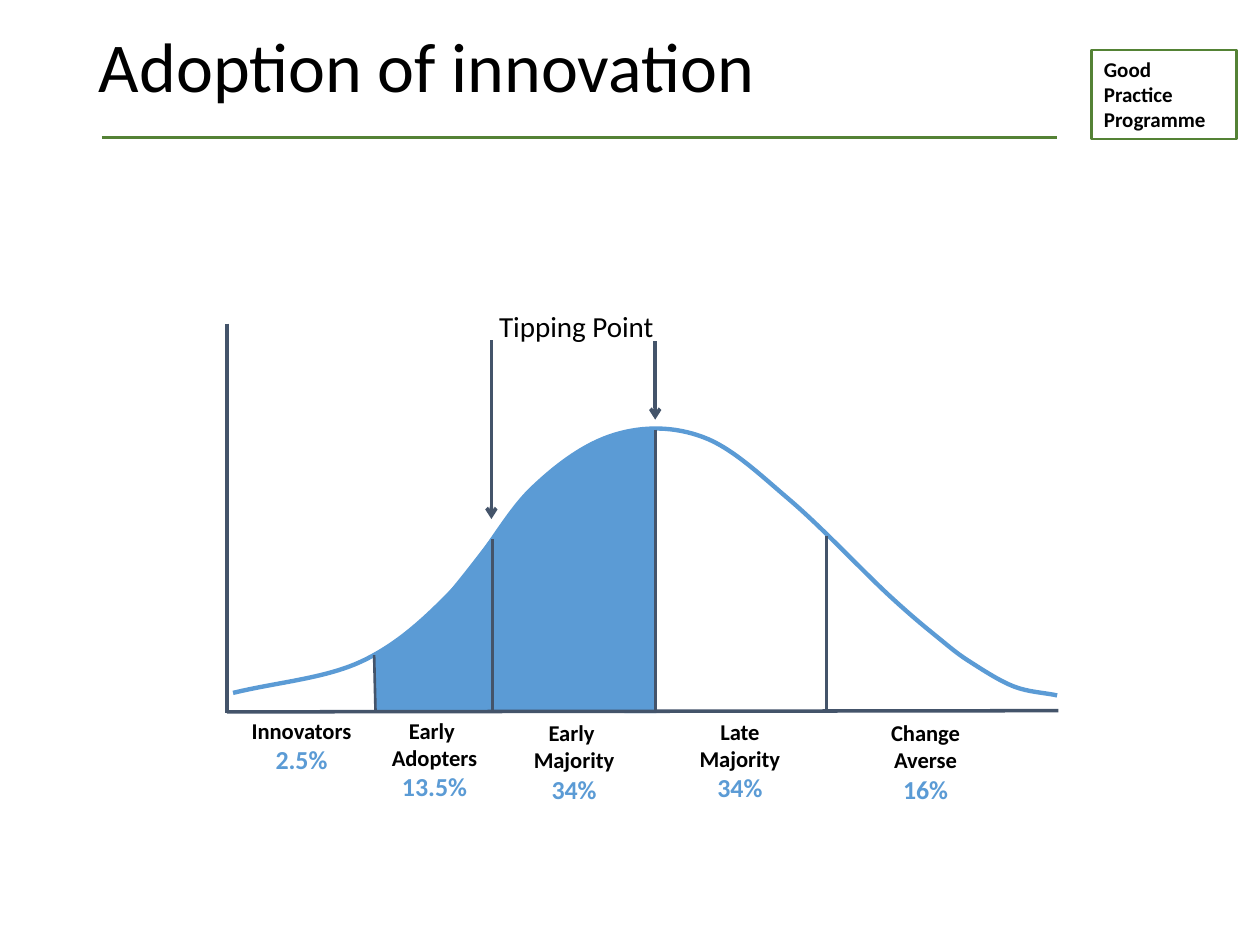
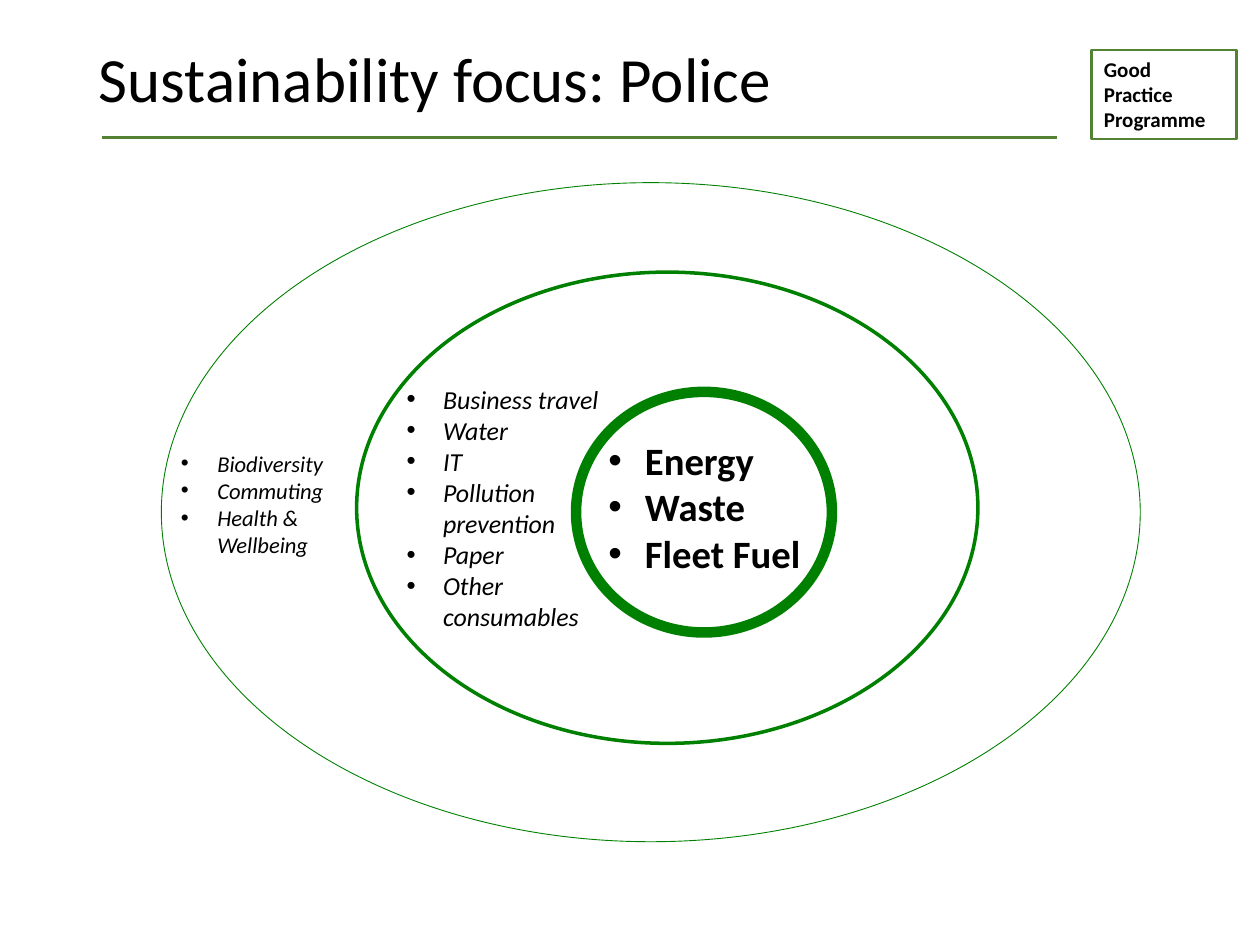
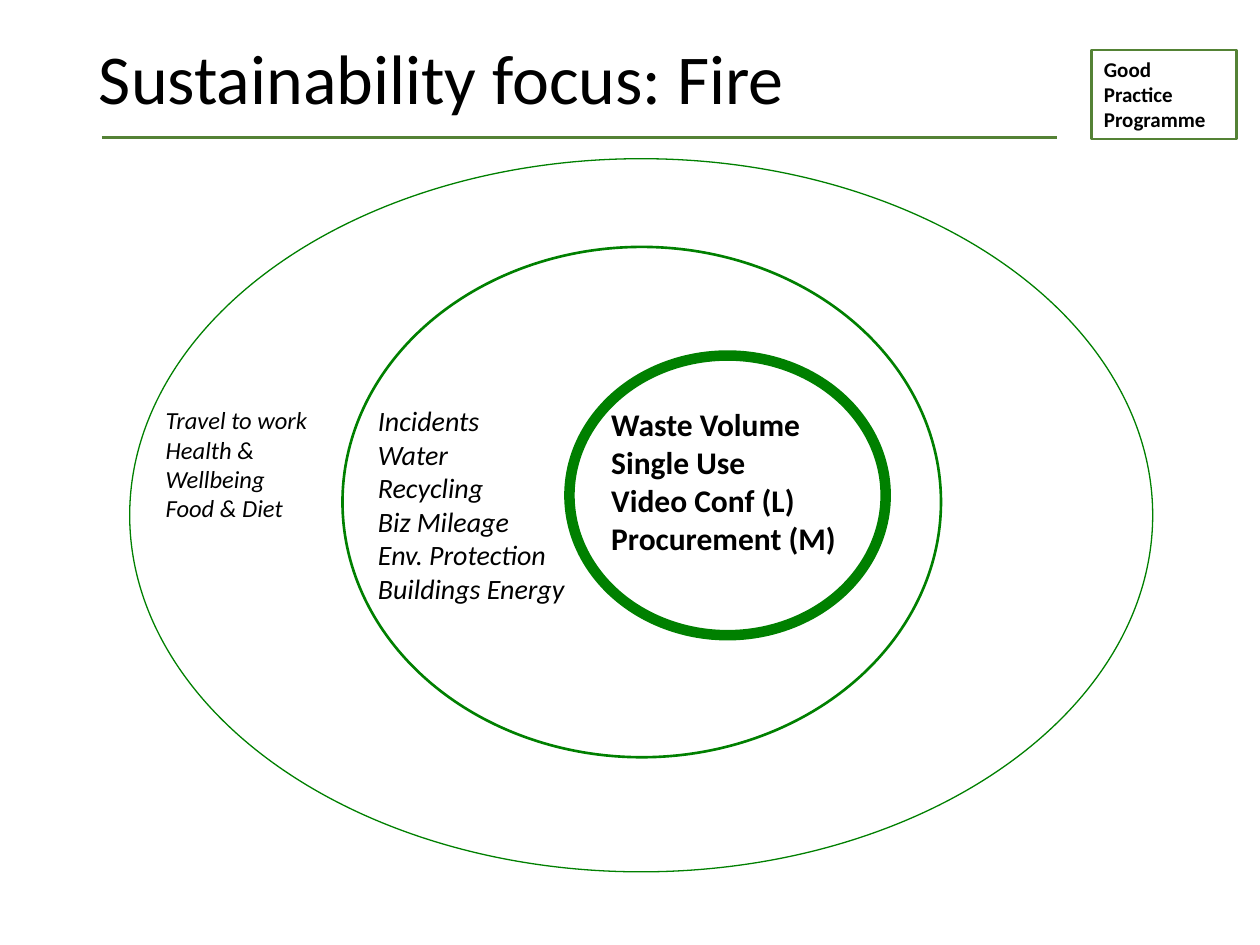
from lxml.etree import SubElement
from pptx import Presentation
from pptx.dml.color import RGBColor
from pptx.enum.shapes import MSO_CONNECTOR, MSO_SHAPE
from pptx.enum.text import MSO_ANCHOR as ANCHOR, MSO_AUTO_SIZE as AUTO, PP_ALIGN as ALIGN
from pptx.oxml.ns import qn
from pptx.util import Pt

FONT = "Calibri"
BLACK = RGBColor(0x00, 0x00, 0x00)
BAND_GREEN = RGBColor(0x54, 0x82, 0x35)
RING_GREEN = RGBColor(0x00, 0x80, 0x00)
CURVE_BLUE = RGBColor(0x5B, 0x9B, 0xD5)
SLATE = RGBColor(0x44, 0x54, 0x6A)


def add_text(page, lines, left, top, width, height, *, size, bold=False, italic=False,
             align=ALIGN.LEFT, anchor=ANCHOR.TOP, wrap=True, grow=True, bullets=False,
             spacing=None, border=None):
    area = Pt(left), Pt(top), Pt(width), Pt(height)
    if border:
        box = page.shapes.add_shape(MSO_SHAPE.RECTANGLE, *area)
        box.shadow.inherit = False
        box.fill.background()
        box.line.color.rgb = border
        box.line.width = Pt(1.5)
    else:
        box = page.shapes.add_textbox(*area)
    frame = box.text_frame
    frame.word_wrap = wrap
    frame.auto_size = AUTO.SHAPE_TO_FIT_TEXT if grow else AUTO.NONE
    frame.vertical_anchor = anchor
    for number, line in enumerate(lines):
        para = frame.add_paragraph() if number else frame.paragraphs[0]
        if bullets:
            properties = para._p.get_or_add_pPr()
            properties.set("marL", str(Pt(20.9)))
            properties.set("indent", str(-Pt(20.9)))
            SubElement(properties, qn("a:buFont"), typeface="Arial")
            SubElement(properties, qn("a:buChar"), char="•")
        para.alignment = align
        if spacing:
            para.line_spacing = spacing
        span = para.add_run()
        span.text = line
        font = span.font
        font.name, font.size, font.bold, font.italic = FONT, Pt(size), bold, italic
        font.color.rgb = BLACK
    return box


def add_line(page, x1, y1, x2, y2, *, color=SLATE, width=1.5, arrow=False):
    line = page.shapes.add_connector(MSO_CONNECTOR.STRAIGHT, Pt(x1), Pt(y1), Pt(x2), Pt(y2))
    line.line.color.rgb = color
    line.line.width = Pt(width)
    properties = line._element.spPr
    if arrow:
        SubElement(properties.find(qn("a:ln")), qn("a:tailEnd"), type="arrow")
    SubElement(properties, qn("a:effectLst"))


deck = Presentation()
deck.slide_width, deck.slide_height = Pt(720), Pt(540)

# Title, rule and programme box on every slide
pages = []
for title, size, anchor in [
    ("Adoption of innovation", 40, ANCHOR.TOP),
    ("Sustainability focus: Police", 36, ANCHOR.MIDDLE),
    ("Sustainability focus: Fire", 40, ANCHOR.MIDDLE),
]:
    page = deck.slides.add_slide(deck.slide_layouts[6])
    pages.append(page)
    add_text(page, ["Good Practice Programme"], 623.7, 28.6, 82.8, 50.9,
             size=12, bold=True, border=BAND_GREEN)
    add_line(page, 58.3, 78.5, 604.1, 78.5, color=BAND_GREEN)
    add_text(page, [title], 49.5, 15, 566.6, 63.4, size=size, anchor=anchor,
             grow=False, spacing=0.9)
adoption, police, fire = pages

# Adoption curve: each knot's handles follow the line between its neighbours
knots = [(133.2, 396), (206.6, 378), (259.2, 337), (303.8, 279.4), (351.4, 248.4),
         (401.8, 249.8), (451.4, 285.8), (507.6, 339.8), (537.8, 365.8),
         (555.1, 378.7), (579.6, 392.4), (604.1, 397.4)]
before = tuple(2 * a - b for a, b in zip(knots[0], knots[1]))
after = tuple(2 * a - b for a, b in zip(knots[-1], knots[-2]))
guides = [before, *knots, after]
curve = [knots[0]]
for quad in zip(guides, guides[1:], guides[2:], guides[3:]):
    axes = list(zip(*quad))
    curve.append(tuple(b + (c - a) / 6 for a, b, c, d in axes))
    curve.append(tuple(c - (d - b) / 6 for a, b, c, d in axes))
    curve.append(quad[2])

# Shaded early adopters and early majority: right side, top, left side
shaded = [(375.1, 407.5), (375.1, 355.7), (375.1, 295.9), (375.1, 244.8),
          (300.2, 241.2), (271.4, 347.8), (213.8, 374.4),
          (214.6, 385.2), (214.6, 396), (214.6, 406.8)]

# Every three points after the first make one Bézier segment
for points, closed in [(shaded, True), (curve, False)]:
    outline = [(Pt(x), Pt(y)) for x, y in points]
    builder = adoption.shapes.build_freeform(*outline[0])
    builder.add_line_segments(outline[1:], close=closed)
    shape = builder.convert_to_shape()
    segments = list(shape._element.iter(qn("a:lnTo")))
    for first, second, third in zip(segments[::3], segments[1::3], segments[2::3]):
        first.tag = qn("a:cubicBezTo")
        for segment in (second, third):
            first.append(segment[0])
            segment.getparent().remove(segment)
    shape.shadow.inherit = False
    if closed:
        shape.fill.solid()
        shape.fill.fore_color.rgb = CURVE_BLUE
        shape.line.fill.background()
    else:
        shape.fill.background()
        shape.line.color.rgb = CURVE_BLUE
        shape.line.width = Pt(2.5)

# Axes, stage dividers and tipping point
add_line(adoption, 129.6, 406.8, 604.8, 406.1, width=2)
add_line(adoption, 129.6, 185, 129.6, 407.5, width=2)
for x1, top, x2, bottom in [(213.8, 374.4, 214.6, 406.8), (281.5, 308.2, 281.5, 406.8),
                            (374.4, 245.5, 374.4, 406.1), (472.3, 306, 472.3, 406.1)]:
    add_line(adoption, x1, top, x2, bottom)
for x, top, bottom in [(280.8, 194.4, 296.6), (374.4, 195.1, 239.8)]:
    add_line(adoption, x, top, x, bottom, width=2, arrow=True)
add_text(adoption, ["Tipping Point"], 278.1, 172.8, 104.4, 27.4, size=16.6, wrap=False)

# Stage labels with their shares
for lines, left, top, width, height, wrap in [
    (["Innovators", "2.5%"], 135.9, 406.2, 72.7, 41, False),
    (["Early ", "Adopters", "13.5%"], 216.2, 406.1, 64.1, 56.2, False),
    (["Early ", "Majority", "34%"], 297.4, 407.3, 61.2, 56.2, False),
    (["Late", "Majority", "34%"], 392.2, 406.7, 61.2, 56.2, False),
    (["Change Averse", "16%"], 494, 407.5, 69.8, 56.2, True),
]:
    label = add_text(adoption, lines, left, top, width, height, size=12.9, bold=True,
                     align=ALIGN.CENTER, wrap=wrap)
    share = label.text_frame.paragraphs[-1].runs[0].font
    share.size = Pt(14.8)
    share.color.rgb = CURVE_BLUE

# Focus rings, from the outside in
for page, rings in [
    (police, [(92.2, 104.4, 559.4, 376.6, 0.5), (203.8, 155.5, 355, 269.3, 2),
              (329.2, 223.9, 146.2, 137.5, 6)]),
    (fire, [(74.1, 90.7, 584.6, 407.5, 0.75), (195.7, 141.1, 342, 291.6, 1.5),
            (325.4, 203.2, 180.7, 159.8, 6)]),
]:
    for left, top, width, height, weight in rings:
        ring = page.shapes.add_shape(MSO_SHAPE.OVAL, Pt(left), Pt(top), Pt(width), Pt(height))
        ring.shadow.inherit = False
        ring.fill.background()
        ring.line.color.rgb = RING_GREEN
        ring.line.width = Pt(weight)

# Topics inside the rings: the core is bold, the others italic
for page, lines, left, top, width, height, size, core in [
    (police, ["Energy", "Waste", "Fleet Fuel"], 340.6, 246, 125.3, 87.8, 22.1, True),
    (police, ["Business travel", "Water", "IT", "Pollution prevention", "Paper",
              "Other consumables"], 225.2, 215.6, 133.2, 168.5, 14.8, False),
    (police, ["Biodiversity", "Commuting", "Health & Wellbeing"],
     96.2, 253.4, 126, 69.8, 12.9, False),
    (fire, ["Waste Volume", "Single Use", "Video Conf (L)", "Procurement (M)"],
     342.2, 228, 144.7, 94.3, 18, True),
    (fire, ["Incidents", "Water", "Recycling", "Biz Mileage", "Env. Protection",
            "Buildings Energy"], 208.9, 227, 158.4, 145.4, 16, False),
    (fire, ["Travel to work", "Health & Wellbeing", "Food & Diet"],
     87.6, 228, 118.8, 74.9, 14, False),
]:
    add_text(page, lines, left, top, width, height, size=size, bold=core, italic=not core,
             wrap=not core, bullets=page is police)

deck.save("out.pptx")
